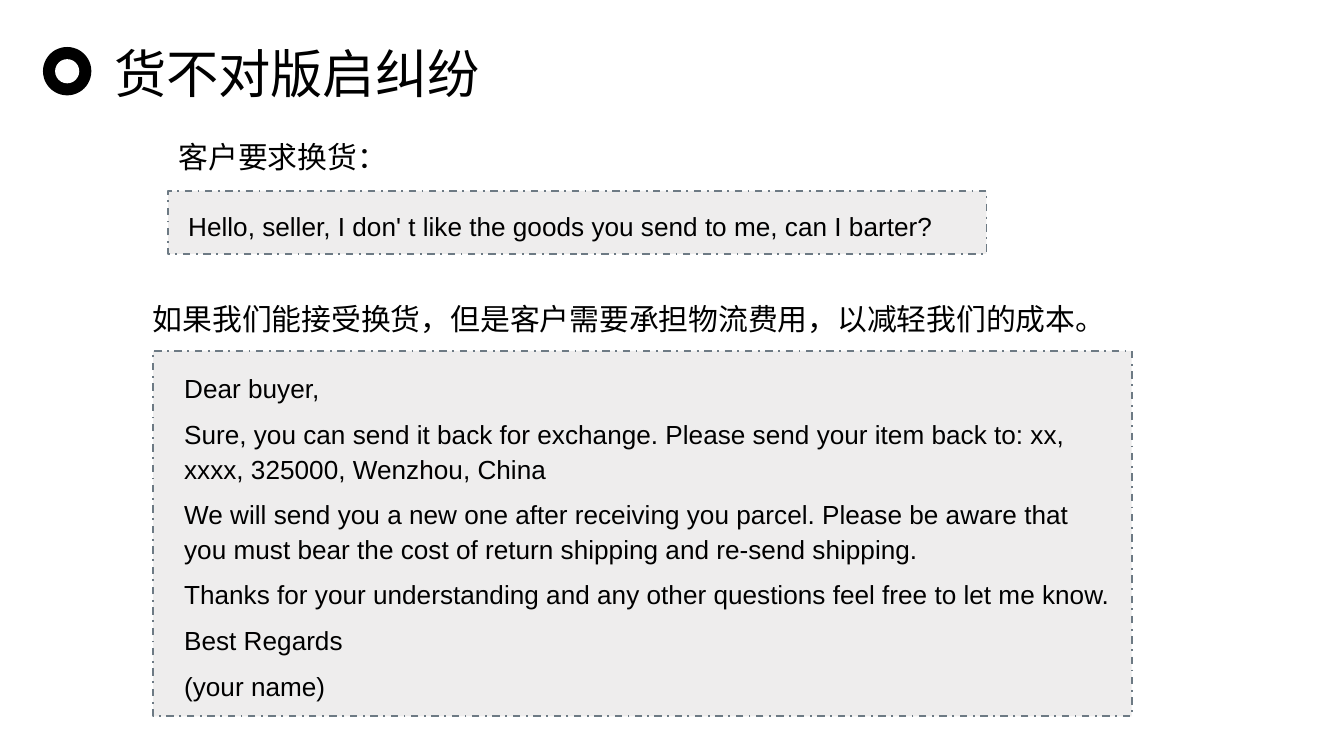
import pptx
import pptx.dml.color
import pptx.enum.dml
import pptx.enum.shapes
import pptx.enum.text
import pptx.util
import lxml.etree

THEME = {
    "ink": "000000", "paper": "FFFFFF", "panel": "EEEDED", "border": "6D7A84",
    "latin": "Arial", "chinese": "Noto Sans CJK SC",
    "title": 28, "caption": 16, "message": 14,
}

deck = pptx.Presentation()
deck.slide_width = pptx.util.Inches(10)
deck.slide_height = deck.slide_width * 9 // 16
slide = deck.slides.add_slide(deck.slide_layouts[5])
COLUMN = ROW = deck.slide_width / 100  # square grid, 100 columns wide


def cells(left, top, width, height):
    return [round(n * step) for n, step in
            zip((left, top, width, height), (COLUMN, ROW, COLUMN, ROW))]


def write(frame, lines, role, face, line_spacing=1.0, gap=0):
    """Fill a text frame, one paragraph per line, in one style."""
    frame.text = "\n".join(lines)
    frame.word_wrap = True
    frame.vertical_anchor = pptx.enum.text.MSO_ANCHOR.TOP
    for number, paragraph in enumerate(frame.paragraphs):
        paragraph.alignment = pptx.enum.text.PP_ALIGN.LEFT
        paragraph.line_spacing = line_spacing
        paragraph.space_before = pptx.util.Pt(gap if number else 0)
        for run in paragraph.runs:
            run.font.size = pptx.util.Pt(THEME[role])
            run.font.name = THEME[face]
            run.font.color.rgb = pptx.dml.color.RGBColor.from_string(THEME["ink"])
            east_asian = lxml.etree.SubElement(
                run.font._element, pptx.oxml.ns.qn("a:ea"))
            east_asian.set("typeface", THEME[face])


# Ring and title
ring = slide.shapes.add_group_shape()
for left, top, size, colour in ((3.2, 3.5, 3.6, "ink"), (4.1, 4.4, 1.8, "paper")):
    disc = ring.shapes.add_shape(
        pptx.enum.shapes.MSO_SHAPE.OVAL, *cells(left, top, size, size))
    disc.shadow.inherit = False
    disc.fill.solid()
    disc.fill.fore_color.rgb = pptx.dml.color.RGBColor.from_string(THEME[colour])
    disc.line.fill.background()

title = slide.shapes.title
title.left, title.top, title.width, title.height = cells(7.5, 2.6, 29.2, 5.7)
write(title.text_frame, ["货不对版启纠纷"], "title", "chinese")
title.text_frame.word_wrap = False
title.text_frame.auto_size = pptx.enum.text.MSO_AUTO_SIZE.NONE

# Captions
captions = [
    ("客户要求换货：", (12.3, 9, 18.2, 4.5)),
    ("如果我们能接受换货，但是客户需要承担物流费用，以减轻我们的成本。",
     (10.4, 21.1, 72.6, 4.5)),
]
for caption, area in captions:
    box = slide.shapes.add_textbox(*cells(*area))
    write(box.text_frame, [caption], "caption", "chinese", line_spacing=1.3)

# Messages: panel area, text area, paragraphs
messages = [
    ((12.5, 14.2, 60.9, 4.7), (13.1, 15, 59.2, 3.5), [
        "Hello, seller, I don' t like the goods you send to me, can I barter?",
    ]),
    ((11.4, 26.1, 72.8, 27.2), (12.8, 27.1, 70.8, 25.8), [
        "Dear buyer,",
        "Sure, you can send it back for exchange. Please send your item back to: "
        "xx, xxxx, 325000, Wenzhou, China",
        "We will send you a new one after receiving you parcel. Please be aware "
        "that you must bear the cost of return shipping and re-send shipping.",
        "Thanks for your understanding and any other questions feel free to let "
        "me know.",
        "Best Regards",
        "(your name)",
    ]),
]
for panel_area, text_area, lines in messages:
    message = slide.shapes.add_group_shape()
    panel = message.shapes.add_shape(
        pptx.enum.shapes.MSO_SHAPE.RECTANGLE, *cells(*panel_area))
    panel.shadow.inherit = False
    panel.fill.solid()
    panel.fill.fore_color.rgb = pptx.dml.color.RGBColor.from_string(THEME["panel"])
    panel.line.color.rgb = pptx.dml.color.RGBColor.from_string(THEME["border"])
    panel.line.width = pptx.util.Pt(1)
    panel.line.dash_style = pptx.enum.dml.MSO_LINE.DASH_DOT

    box = message.shapes.add_textbox(*cells(*text_area))
    frame = box.text_frame
    frame.margin_left = frame.margin_right = pptx.util.Inches(0.09)
    frame.margin_top = frame.margin_bottom = pptx.util.Inches(0.04)
    write(frame, lines, "message", "latin", line_spacing=1.1, gap=6)

deck.save("out.pptx")
